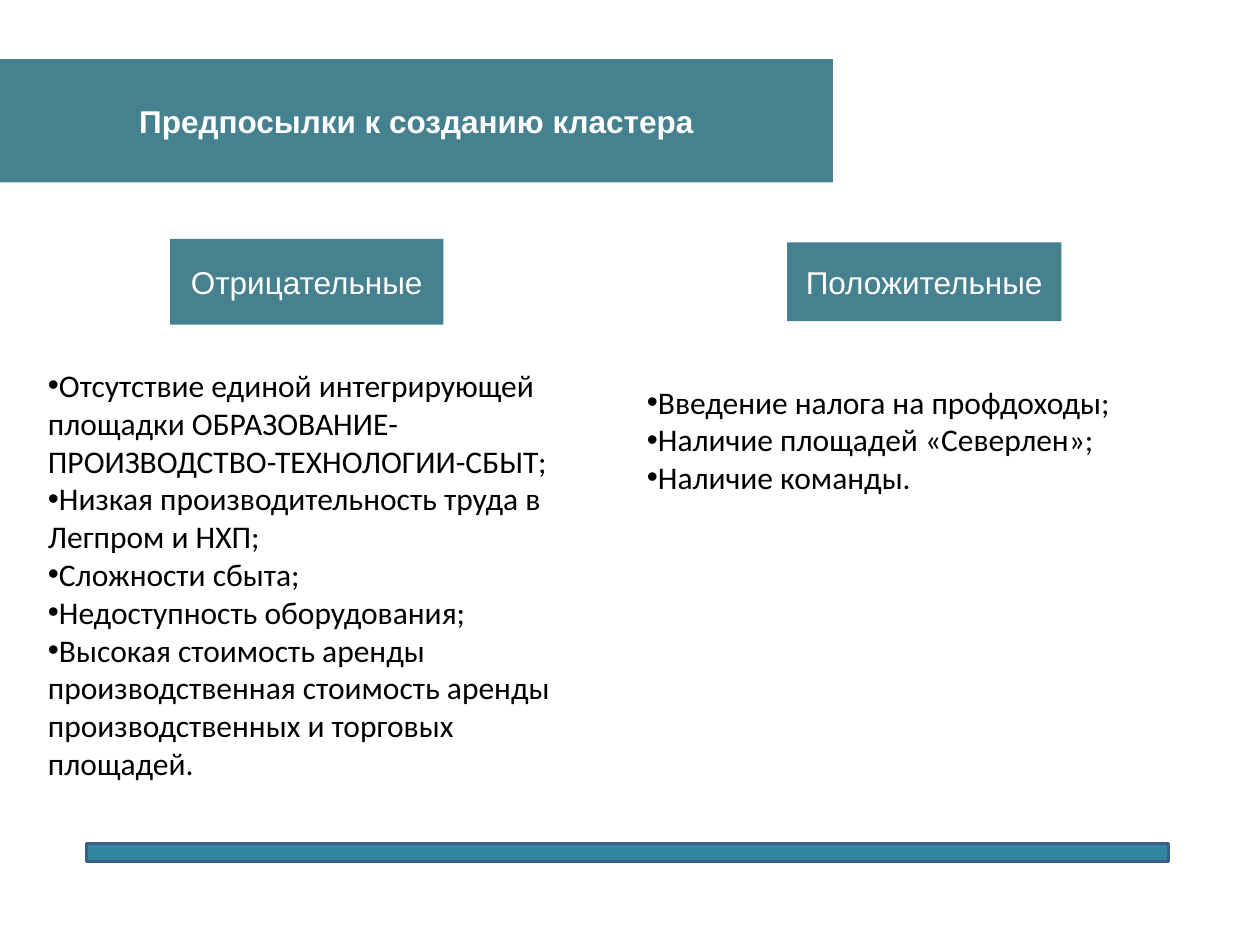
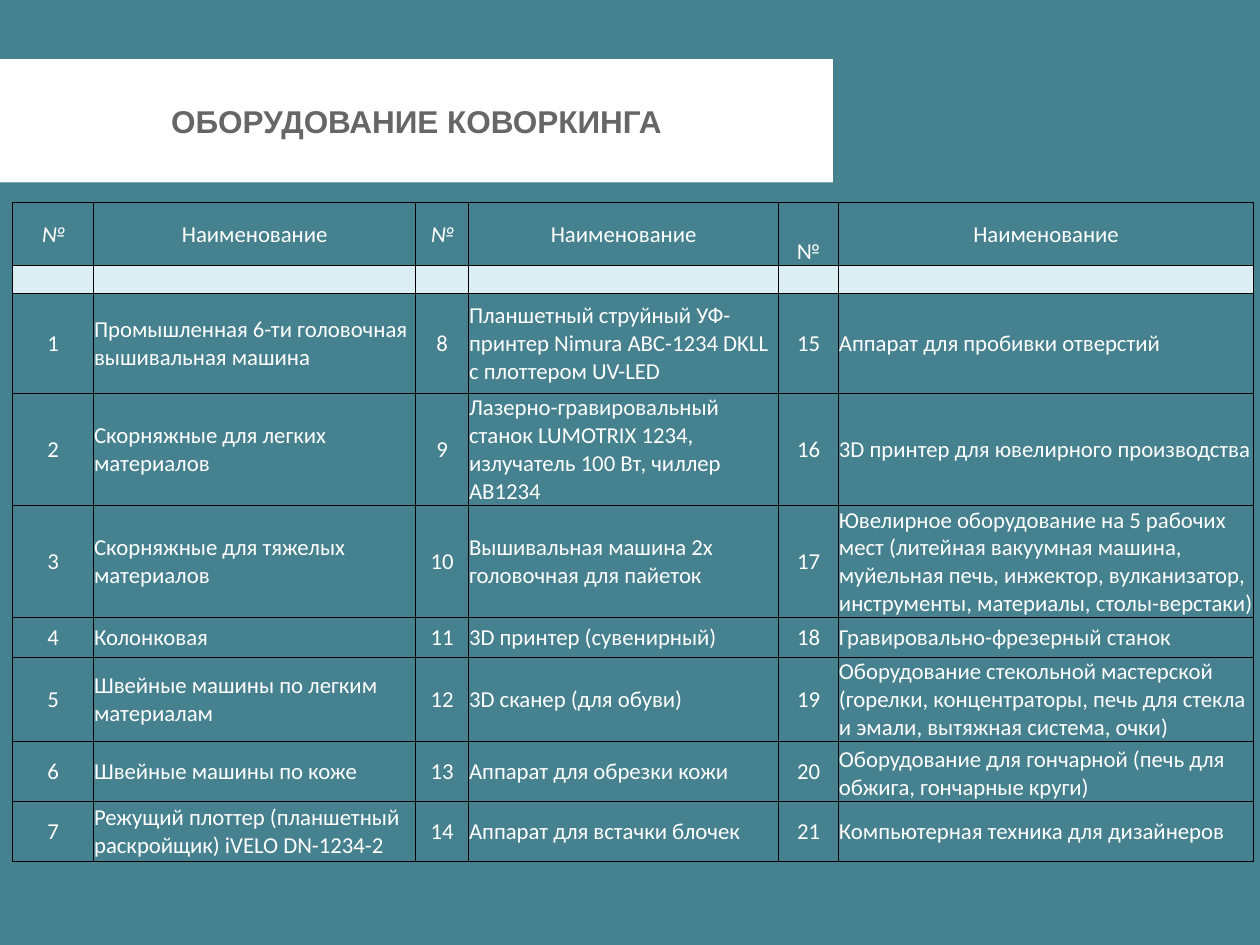
from lxml import etree
from pptx import Presentation
from pptx.dml.color import RGBColor
from pptx.enum import shapes, text
from pptx.oxml.ns import qn
from pptx.util import Pt

# Content
CAUSES_TITLE = "Предпосылки к созданию кластера"
# label, label place, list place, items
CAUSES = [
    ("Отрицательные", (97.2, 136.5, 156.2, 49), (20.2, 202, 324.7, 254.2), [
        "Отсутствие единой интегрирующей площадки ОБРАЗОВАНИЕ-ПРОИЗВОДСТВО-ТЕХНОЛОГИИ-СБЫТ;",
        "Низкая производительность труда в Легпром и НХП;",
        "Сложности сбыта;",
        "Недоступность оборудования;",
        "Высокая стоимость аренды производственная стоимость аренды "
        "производственных и торговых площадей.",
    ]),
    ("Положительные", (449.8, 138.5, 156.7, 45), (362.5, 211.4, 337.7, 80), [
        "Введение налога на профдоходы;",
        "Наличие площадей «Северлен»;",
        "Наличие команды.",
    ]),
]

EQUIPMENT_TITLE = "ОБОРУДОВАНИЕ КОВОРКИНГА"
EQUIPMENT = [
    "Промышленная 6-ти головочная вышивальная машина",
    "Скорняжные для легких материалов",
    "Скорняжные для тяжелых материалов",
    "Колонковая",
    "Швейные машины по легким материалам",
    "Швейные машины по коже",
    "Режущий плоттер (планшетный раскройщик) iVELO DN-1234-2",
    "Планшетный струйный УФ-принтер Nimura ABC-1234 DKLL с плоттером UV-LED",
    "Лазерно-гравировальный станок LUMOTRIX 1234, излучатель 100 Вт, чиллер AB1234",
    "Вышивальная машина 2х головочная для пайеток",
    "3D принтер (сувенирный)",
    "3D сканер (для обуви)",
    "Аппарат для обрезки кожи",
    "Аппарат для встачки блочек",
    "Аппарат для пробивки отверстий",
    "3D принтер для ювелирного производства",
    "Ювелирное оборудование на 5 рабочих мест (литейная вакуумная машина, "
    "муйельная печь, инжектор, вулканизатор, инструменты, материалы, столы-верстаки)",
    "Гравировально-фрезерный станок",
    "Оборудование стекольной мастерской (горелки, концентраторы, печь для стекла "
    "и эмали, вытяжная система, очки)",
    "Оборудование для гончарной (печь для обжига, гончарные круги)",
    "Компьютерная техника для дизайнеров",
]
COLUMNS = [46.3, 184, 30.3, 177.1, 34.3, 237.1]
ROWS = [36, 16, 57.2, 64, 64, 22.9, 48, 34.3, 34.3]
BOTTOM_CELLS = {(0, 4), (4, 5), (6, 5), (7, 5)}

# Shared style
TEAL, WHITE, BLACK, GREY = "45818E", "FFFFFF", "000000", "666666"
PALE, BAR, BAR_EDGE = "DBEEF3", "31859C", "3A5F8C"
TITLE_BAND = (0, 33.8, 476, 70.4)
CELL_INSET = 0.3
CENTER = text.PP_ALIGN.CENTER
MIDDLE, TOP = text.MSO_ANCHOR.MIDDLE, text.MSO_ANCHOR.TOP


def color(value):
    return RGBColor.from_string(value)


def paint(shape, fill):
    shape.fill.solid()
    shape.fill.fore_color.rgb = color(fill)


def place(shape, area):
    shape.left, shape.top, shape.width, shape.height = map(Pt, area)


def write(para, words, size, face, tint, bold=False, italic=False):
    span = para.add_run()
    span.text = words
    font = span.font
    font.size, font.name, font.bold, font.italic = Pt(size), face, bold, italic
    font.color.rgb = color(tint)


def set_frame(frame, anchor):
    frame.word_wrap = True
    frame.auto_size = text.MSO_AUTO_SIZE.NONE
    frame.vertical_anchor = anchor
    frame.margin_left = frame.margin_right = Pt(7.2)
    frame.margin_top = frame.margin_bottom = Pt(7.2)


def add_box(page, area, fill):
    box = page.shapes.add_shape(shapes.MSO_SHAPE.RECTANGLE, *map(Pt, area))
    box.shadow.inherit = False
    paint(box, fill)
    box.line.fill.background()
    return box


def caption(box, words, tint, bold=False):
    set_frame(box.text_frame, MIDDLE)
    para = box.text_frame.paragraphs[0]
    para.alignment = CENTER
    write(para, words, 18, "Arial", tint, bold)


def add_title(page, words, fill, tint):
    title = page.shapes.title
    place(title, TITLE_BAND)
    paint(title, fill)
    caption(title, words, tint, bold=True)


def fill_list(body, area, items):
    place(body, area)
    frame = body.text_frame
    set_frame(frame, TOP)
    for index, item in enumerate(items):
        para = frame.add_paragraph() if index else frame.paragraphs[0]
        para.space_before = Pt(0)
        props = para._p.get_or_add_pPr()
        props.set("marL", "0")
        props.set("indent", "0")
        tint = etree.SubElement(props, qn("a:buClr"))
        etree.SubElement(tint, qn("a:srgbClr"), val=BLACK)
        etree.SubElement(props, qn("a:buFont"), typeface="Arial")
        etree.SubElement(props, qn("a:buChar"), char="•")
        write(para, item, 18, "Calibri", BLACK)


def add_borders(cell):
    props = cell._tc.get_or_add_tcPr()
    for side in "LRTB":
        line = etree.SubElement(props, qn("a:ln" + side), w=str(Pt(0.5)))
        fill = etree.SubElement(line, qn("a:solidFill"))
        etree.SubElement(fill, qn("a:srgbClr"), val=BLACK)


def build_causes(deck):
    page = deck.slides.add_slide(deck.slide_layouts[3])
    add_title(page, CAUSES_TITLE, TEAL, WHITE)
    bodies = list(page.placeholders)[1:3]
    for body, (label, label_area, list_area, items) in zip(bodies, CAUSES):
        fill_list(body, list_area, items)
        caption(add_box(page, label_area, TEAL), label, WHITE)

    # Bottom bar
    bar = add_box(page, (49.7, 482.2, 617.8, 10.1), BAR)
    bar.line.color.rgb = color(BAR_EDGE)
    bar.line.width = Pt(1.75)


def build_equipment(deck):
    page = deck.slides.add_slide(deck.slide_layouts[5])
    backdrop = add_box(page, (0, 0, 720, 540), TEAL)
    page.shapes._spTree.insert(2, backdrop._element)
    add_title(page, EQUIPMENT_TITLE, WHITE, GREY)

    # Three pairs of number and name, counted down each pair of columns
    depth = len(EQUIPMENT) // 3
    grid = [["№", "Наименование"] * 3, [""] * 6]
    for first in range(depth):
        grid.append([words for index in range(first, len(EQUIPMENT), depth)
                     for words in (str(index + 1), EQUIPMENT[index])])

    area = (7.2, 115.7, sum(COLUMNS), sum(ROWS))
    table = page.shapes.add_table(len(ROWS), len(COLUMNS), *map(Pt, area)).table
    table.first_row = table.horz_banding = False
    for column, width in zip(table.columns, COLUMNS):
        column.width = Pt(width)
    for row, height in zip(table.rows, ROWS):
        row.height = Pt(height)

    for r, line in enumerate(grid):
        for c, words in enumerate(line):
            cell = table.cell(r, c)
            cell.margin_left = cell.margin_right = cell.margin_top = Pt(CELL_INSET)
            cell.margin_bottom = 0
            bottom = (r, c) in BOTTOM_CELLS
            cell.vertical_anchor = text.MSO_ANCHOR.BOTTOM if bottom else MIDDLE
            add_borders(cell)
            para = cell.text_frame.paragraphs[0]
            if not words:
                paint(cell, PALE)
                etree.SubElement(para._p, qn("a:endParaRPr"), sz="1000")
                continue
            cell.fill.background()
            if r == 0 or c % 2 == 0:
                para.alignment = CENTER
            write(para, words, 13, "Calibri", WHITE, italic=r == 0 and c in (0, 2))


def main():
    deck = Presentation()
    deck.slide_width, deck.slide_height = Pt(720), Pt(540)
    build_causes(deck)
    build_equipment(deck)
    deck.save("out.pptx")


if __name__ == "__main__":
    main()
